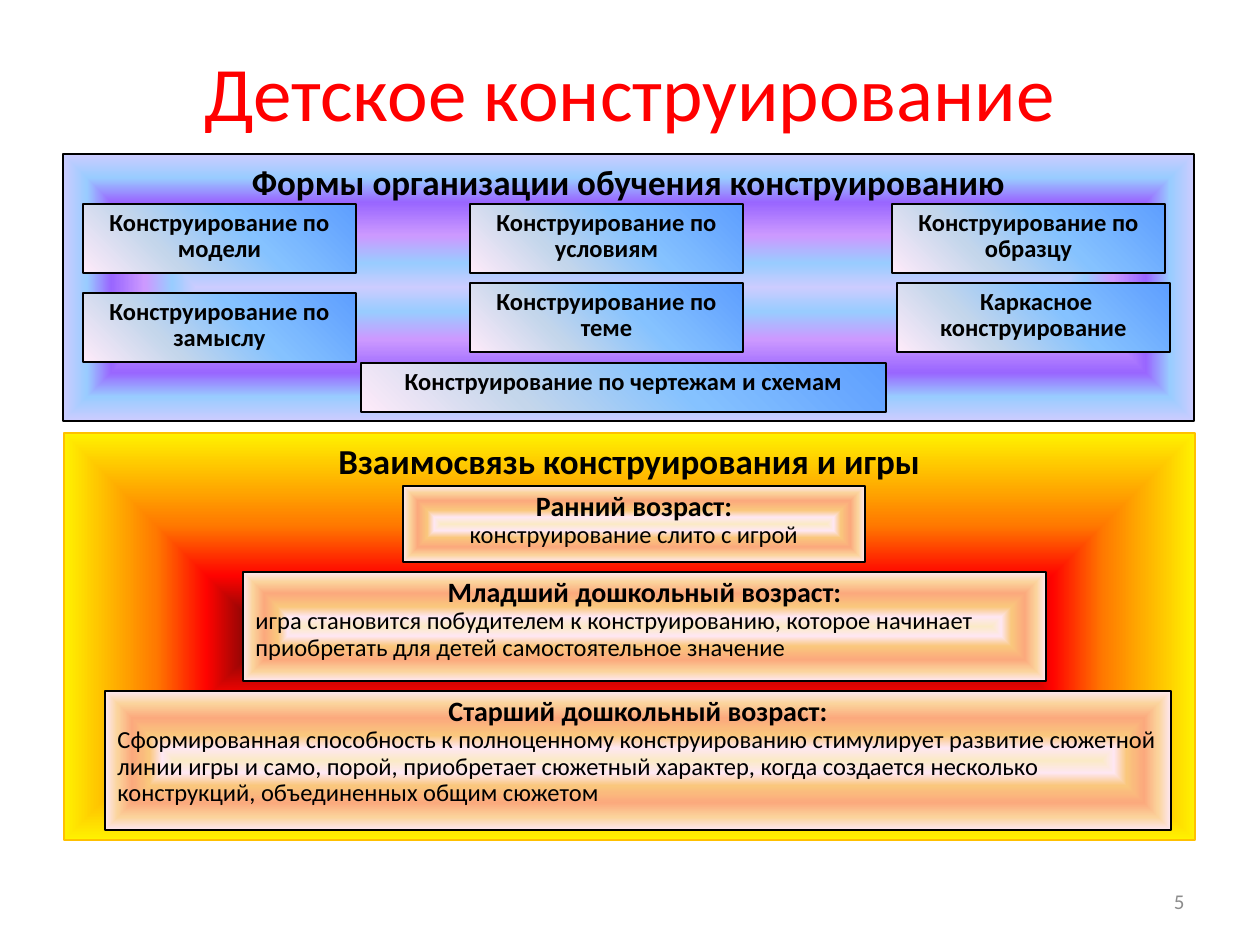
from lxml import etree
from pptx import Presentation
from pptx.dml.color import RGBColor
from pptx.enum.shapes import MSO_SHAPE
from pptx.enum.text import MSO_ANCHOR, PP_ALIGN
from pptx.oxml.ns import qn
from pptx.util import Pt

PX = 914400 / 126
RECT = MSO_SHAPE.RECTANGLE
TOP, MIDDLE = MSO_ANCHOR.TOP, MSO_ANCHOR.MIDDLE
LEFT, CENTER, RIGHT = PP_ALIGN.LEFT, PP_ALIGN.CENTER, PP_ALIGN.RIGHT
FONT = "Calibri"
COLORS = {"title": "FF0000", "ink": "000000", "gold": "FFC000", "number": "8C8C8C"}
# Gradient stops: position in percent and colour
LILAC = [(0, "CCCCFF"), (18, "99CCFF"), (39, "CC99FF"), (64, "9966FF"), (82, "99CCFF"), (100, "CCCCFF")]
SKY = [(0, "FFEBFA"), (30, "C4D6EB"), (60, "85C2FF"), (100, "5E9EFF")]
FIRE = [(0, "4D0808"), (30, "FF0300"), (55, "FF7A00"), (100, "FFF200")]
PEACH = [(0, "FBEAC7"), (18, "FEE7F2"), (36, "FAC77D"), (61, "FBA97D"), (82, "FBD49C"), (100, "FEE7F2")]

prs = Presentation()
prs.slide_width, prs.slide_height = round(1260 * PX), round(945 * PX)
slide = prs.slides.add_slide(prs.slide_layouts[6])


def write(holder, lines, color="ink", anchor=TOP, spacing=1.0, after=0):
    """Each line is (text, size, bold, alignment)."""
    frame = holder.text_frame
    frame.word_wrap = True
    frame.vertical_anchor = anchor
    frame.text = "\n".join(line[0] for line in lines)
    for paragraph, (_, size, bold, align) in zip(frame.paragraphs, lines):
        paragraph.alignment = align
        paragraph.line_spacing = spacing
        paragraph.space_after = Pt(after)
        for run in paragraph.runs:
            run.font.name, run.font.size, run.font.bold = FONT, Pt(size), bold
            run.font.color.rgb = RGBColor.from_string(COLORS[color])


def gradient_box(box, stops, lines, angle=None, edge="ink", **text_format):
    """Rectangle with a linear gradient, or one from the centre when no angle is given."""
    shape = slide.shapes.add_shape(RECT, *(round(v * PX) for v in box))
    shape.shadow.inherit = False
    shape.line.color.rgb = RGBColor.from_string(COLORS[edge])
    shape.line.width = Pt(0.75)
    shape.fill.gradient()
    grad = shape._element.spPr.find(qn("a:gradFill"))
    for child in list(grad):
        grad.remove(child)
    stop_list = etree.SubElement(grad, qn("a:gsLst"))
    for position, color in stops:
        stop = etree.SubElement(stop_list, qn("a:gs"), pos=str(position * 1000))
        etree.SubElement(stop, qn("a:srgbClr"), val=color)
    if angle is None:
        centre = etree.SubElement(grad, qn("a:path"), path="shape")
        etree.SubElement(centre, qn("a:fillToRect"), {side: "50000" for side in "ltrb"})
    else:
        etree.SubElement(grad, qn("a:lin"), ang=str(angle * 60000), scaled="1")
    write(shape, lines, **text_format)


# Title
title = slide.shapes.add_textbox(*(round(v * PX) for v in (63, 38, 1134, 158)))
write(title, [("Детское конструирование", 44, False, CENTER)], color="title")

# Forms of teaching
gradient_box((63, 154, 1131, 267), LILAC,
             [("Формы организации обучения конструированию", 20, True, CENTER)], after=10)
forms = [
    (83, 204, 273, 69, "Конструирование по модели"),
    (470, 204, 273, 69, "Конструирование по условиям"),
    (361, 363, 525, 49, "Конструирование по чертежам и схемам"),
    (83, 293, 273, 69, "Конструирование по замыслу"),
    (470, 283, 273, 69, "Конструирование по теме"),
    (897, 283, 273, 69, " Каркасное конструирование"),
    (892, 204, 273, 69, "Конструирование по образцу"),
]
for *box, form in forms:
    gradient_box(box, SKY, [(form, 14, True, CENTER)], angle=315, spacing=0.9)

# Construction and play by age
gradient_box((64, 433, 1131, 407), FIRE,
             [("Взаимосвязь конструирования и игры", 20, True, CENTER)], edge="gold", after=10)
ages = [
    ((403, 486, 462, 76), "Ранний возраст:", CENTER, "конструирование слито с игрой"),
    ((243, 572, 803, 109), "Младший дошкольный возраст:", LEFT,
     "игра становится побудителем к конструированию, которое начинает "
     "приобретать для детей самостоятельное значение"),
    ((105, 691, 1066, 139), "Старший дошкольный возраст:", LEFT,
     "Сформированная способность к полноценному конструированию стимулирует развитие сюжетной "
     "линии игры и само, порой, приобретает сюжетный характер, когда создается несколько "
     "конструкций, объединенных общим сюжетом"),
]
for box, age, align, description in ages:
    gradient_box(box, PEACH, [(age, 16, True, CENTER), (description, 14, False, align)], spacing=0.9)

# Slide number
number = slide.shapes.add_textbox(*(round(v * PX) for v in (903, 876, 294, 50)))
write(number, [("5", 12, False, RIGHT)], color="number", anchor=MIDDLE)

prs.save("out.pptx")
